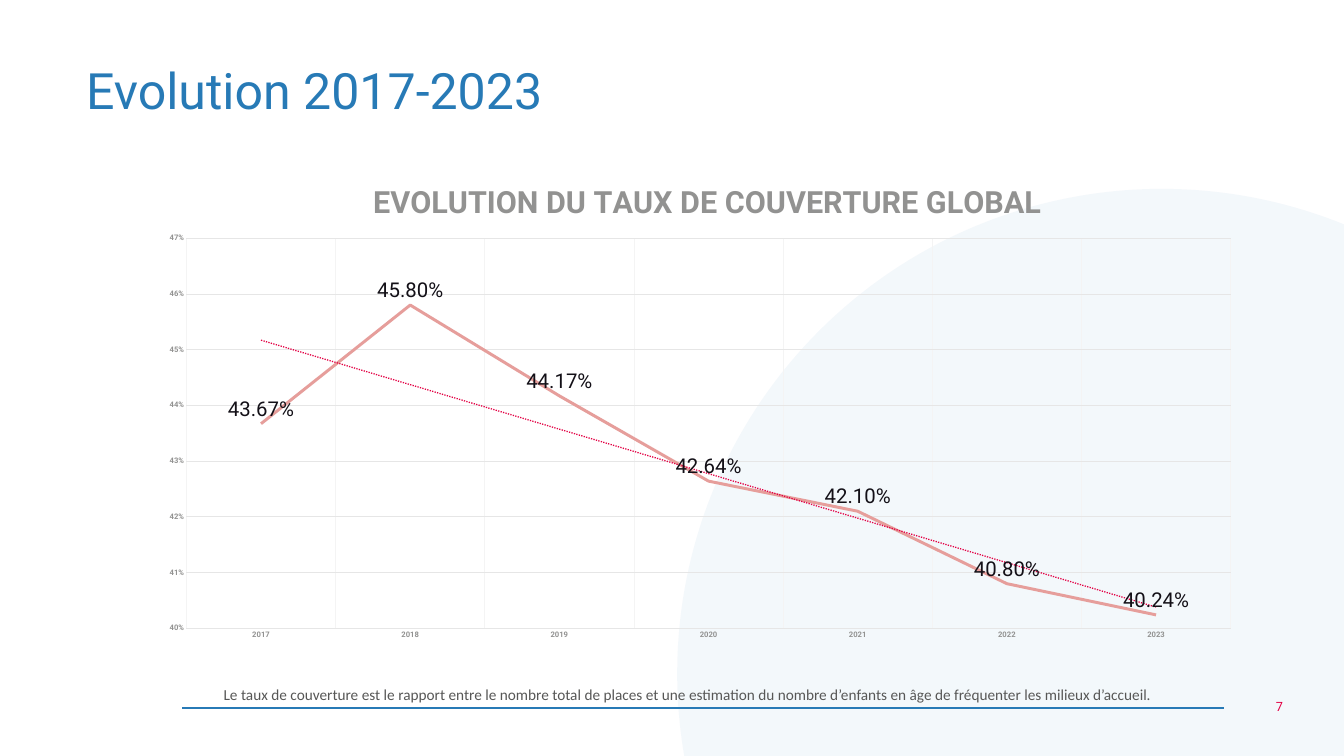
import math

import pptx
import pptx.chart.data
import pptx.dml.color
import pptx.enum.chart
import pptx.enum.dml
import pptx.enum.shapes
import pptx.enum.text
import pptx.oxml
import pptx.oxml.ns
import pptx.util
from pptx.util import Inches

RGBColor = pptx.dml.color.RGBColor
BLUE = RGBColor(0x27, 0x7A, 0xB6)
RED = RGBColor(0xE3, 0x00, 0x44)
SALMON = RGBColor(0xE6, 0x9E, 0x9B)
INK = RGBColor(0x13, 0x10, 0x17)
TEXT_GREY = RGBColor(0x57, 0x57, 0x56)
AXIS_GREY = RGBColor(0x92, 0x92, 0x91)
GRID_GREY = RGBColor(0xE6, 0xE6, 0xE6)
PALE_GREY = RGBColor(0xF4, 0xF4, 0xF4)

WIDTH, HEIGHT = 21.99, 12.37
YEARS = [str(year) for year in range(2017, 2024)]
COVERAGE = [0.4367, 0.458, 0.4417, 0.4264, 0.421, 0.408, 0.4024]


def style_font(font, size, color, name="Roboto", bold=False):
    """Set the face, size, colour and weight of a font."""
    font.name, font.size, font.bold = name, pptx.util.Pt(size), bold
    font.color.rgb = color


def write_text(frame, text, size, color, align=None, spacing=None, **font_format):
    """Put one formatted line of text into a text frame."""
    para = frame.paragraphs[0]
    para.alignment = align
    para.line_spacing = spacing
    span = para.add_run()
    span.text = text
    style_font(span.font, size, color, **font_format)


def style_line(line, color, width):
    """Set the colour and width of a line."""
    line.color.rgb = color
    line.width = pptx.util.Pt(width)


def chart_xml(tag, content):
    """Build a chart element from its tag and inner XML."""
    names = pptx.oxml.ns.nsdecls("c", "a")
    return pptx.oxml.parse_xml(f"<c:{tag} {names}>{content}</c:{tag}>")


def set_layout(parent, position, target="", **fractions):
    """Place a chart part by fractions of the chart area."""
    for old in parent.findall(pptx.oxml.ns.qn("c:layout")):
        parent.remove(old)
    inner = f'<c:layoutTarget val="{target}"/>' if target else ""
    modes = "".join(f'<c:{key}Mode val="edge"/>' for key in "xy")
    values = "".join(f'<c:{key} val="{value}"/>' for key, value in fractions.items())
    layout = f"<c:manualLayout>{inner}{modes}{values}</c:manualLayout>"
    parent.insert(position, chart_xml("layout", layout))


class SlideBuilder:
    """Draw styled elements on the current page."""

    def __init__(self, page):
        """Keep the page."""
        self.page = page

    def text(self, left, top, width, height, text, size, color, **text_format):
        """Add a text box centred vertically."""
        area = [Inches(value) for value in (left, top, width, height)]
        frame = self.page.shapes.add_textbox(*area).text_frame
        frame.word_wrap = True
        frame.vertical_anchor = pptx.enum.text.MSO_ANCHOR.MIDDLE
        write_text(frame, text, size, color, **text_format)

    def rule(self, left, right, top, color, width):
        """Add a horizontal line."""
        ends = [Inches(value) for value in (left, top, right, top)]
        line = self.page.shapes.add_connector(pptx.enum.shapes.MSO_CONNECTOR.STRAIGHT, *ends)
        style_line(line.line, color, width)
        names = pptx.oxml.ns.nsdecls("a")
        line.element.spPr.append(pptx.oxml.parse_xml(f"<a:effectLst {names}/>"))

    def corner_disc(self, center_x, center_y, radius, color, opacity):
        """Add a pale disc cut by the right and bottom slide edges."""
        start = math.pi - math.asin((HEIGHT - center_y) / radius)
        end = 2 * math.pi - math.acos((WIDTH - center_x) / radius)
        steps = 120
        angles = [start + (end - start) * step / steps for step in range(steps + 1)]
        points = [
            (Inches(center_x + radius * math.cos(angle)), Inches(center_y + radius * math.sin(angle)))
            for angle in angles
        ]
        builder = self.page.shapes.build_freeform(*points[0])
        builder.add_line_segments(points[1:] + [(Inches(WIDTH), Inches(HEIGHT))])
        disc = builder.convert_to_shape()
        disc.shadow.inherit = False
        disc.line.fill.background()
        disc.fill.solid()
        disc.fill.fore_color.rgb = color
        names = pptx.oxml.ns.nsdecls("a")
        alpha = pptx.oxml.parse_xml(f'<a:alpha {names} val="{opacity * 1000}"/>')
        disc.element.spPr.find(".//" + pptx.oxml.ns.qn("a:srgbClr")).append(alpha)

    def coverage_chart(self, left, top, width, height, title):
        """Add the coverage line chart with its trend line."""
        data = pptx.chart.data.CategoryChartData(number_format="0.00%")
        data.categories = YEARS
        data.add_series("Series 1", COVERAGE)
        area = [Inches(value) for value in (left, top, width, height)]
        kind = pptx.enum.chart.XL_CHART_TYPE.LINE
        chart = self.page.shapes.add_chart(kind, *area, data).chart
        style_font(chart.font, 10, TEXT_GREY)
        chart.has_legend = False
        chart.has_title = True
        write_text(chart.chart_title.text_frame, title, 36, AXIS_GREY, bold=True)
        chart.chart_title.include_in_layout = False
        set_layout(chart.chart_title._element, 1, x=0.2, y=0.04)
        plot = chart.plots[0]
        plot.vary_by_categories = False
        set_layout(plot._element.getparent(), 0, "inner", x=0.036, y=0.166, w=0.945, h=0.792)
        self.axes(chart)
        self.coverage_series(plot.series[0])

    def axes(self, chart):
        """Style both axes and their gridlines."""
        for axis, grid in ((chart.category_axis, PALE_GREY), (chart.value_axis, GRID_GREY)):
            axis.major_tick_mark = pptx.enum.chart.XL_TICK_MARK.NONE
            axis.minor_tick_mark = pptx.enum.chart.XL_TICK_MARK.NONE
            axis.has_major_gridlines = True
            style_line(axis.major_gridlines.format.line, grid, 0.75)
            style_font(axis.tick_labels.font, 9, AXIS_GREY, bold=True)
        style_line(chart.category_axis.format.line, GRID_GREY, 0.75)
        values = chart.value_axis
        values.format.line.fill.background()
        values.minimum_scale, values.maximum_scale, values.major_unit = 0.4, 0.47, 0.01
        values.tick_labels.number_format = "0%"
        values.tick_labels.number_format_is_linked = False

    def coverage_series(self, series):
        """Style the line, its labels and its linear trend."""
        series.smooth = False
        series.marker.style = pptx.enum.chart.XL_MARKER_STYLE.NONE
        style_line(series.format.line, SALMON, 3.5)
        labels = series.data_labels
        labels.show_value = True
        labels.position = pptx.enum.chart.XL_LABEL_POSITION.ABOVE
        labels.number_format = "0.00%"
        labels.number_format_is_linked = False
        style_font(labels.font, 24, INK)
        trend = chart_xml(
            "trendline",
            f'<c:spPr><a:ln w="{pptx.util.Pt(1.5)}"><a:solidFill><a:srgbClr val="{RED}"/>'
            '</a:solidFill><a:prstDash val="sysDot"/></a:ln></c:spPr>'
            '<c:trendlineType val="linear"/><c:dispRSqr val="0"/><c:dispEq val="0"/>',
        )
        series._element.find(pptx.oxml.ns.qn("c:cat")).addprevious(trend)


def main():
    """Build and save the deck."""
    deck = pptx.Presentation()
    deck.slide_width, deck.slide_height = Inches(WIDTH), Inches(HEIGHT)
    slide = SlideBuilder(deck.slides.add_slide(deck.slide_layouts[6]))
    slide.corner_disc(19.01, 11.02, 7.93, BLUE, 5)
    slide.text(20.02, 11.38, 1.07, 0.35, "7", 15, RED, align=pptx.enum.text.PP_ALIGN.RIGHT)
    slide.rule(2.98, 20.02, 11.59, BLUE, 2)
    slide.text(1.31, 1.06, 16.06, 0.93, "Evolution 2017-2023", 59, BLUE, spacing=0.9)
    slide.coverage_chart(2.4, 2.56, 18.08, 8.06, "EVOLUTION DU TAUX DE COUVERTURE GLOBAL")
    slide.text(
        3.56, 11.17, 16.11, 0.4,
        "Le taux de couverture est le rapport entre le nombre total de places et une estimation "
        "du nombre d’enfants en âge de fréquenter les milieux d’accueil.",
        18, TEXT_GREY, name="Calibri",
    )
    deck.save("out.pptx")


if __name__ == "__main__":
    main()
